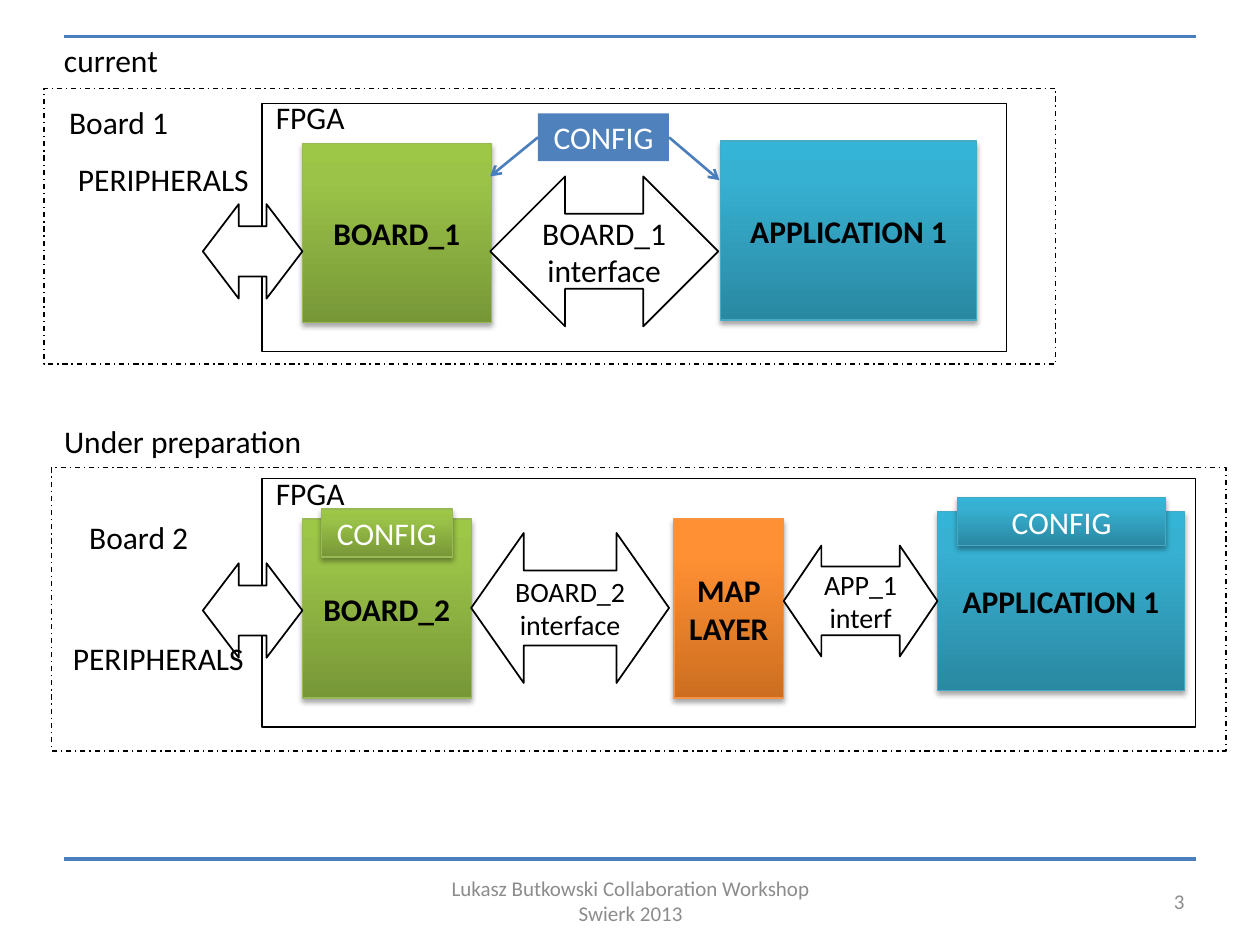
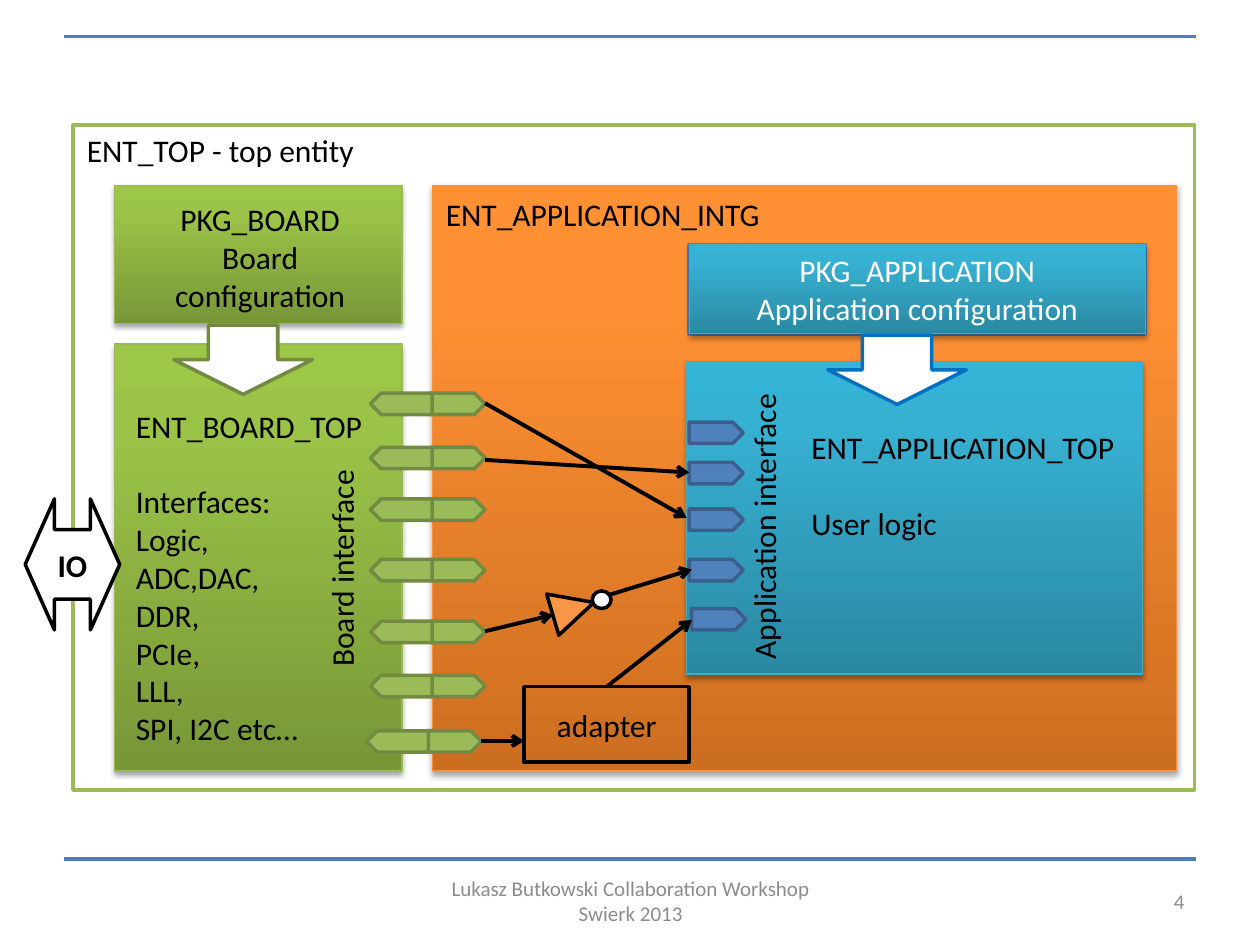
import copy
import dataclasses

import lxml.etree
import pptx
import pptx.dml.color
import pptx.enum.dml
import pptx.enum.shapes
import pptx.enum.text
import pptx.oxml.ns
import pptx.util

PX = 9144
SHAPE = pptx.enum.shapes.MSO_SHAPE
ALIGN = pptx.enum.text.PP_ALIGN
ANCHOR = pptx.enum.text.MSO_ANCHOR
FIT = pptx.enum.text.MSO_AUTO_SIZE
qn = pptx.oxml.ns.qn


@dataclasses.dataclass(frozen=True)
class Gradient:
    bottom: str
    middle: str
    top: str
    edge: str


@dataclasses.dataclass(frozen=True)
class Theme:
    font: str = "Calibri"
    body: int = 18
    small: int = 16
    footer: int = 12
    black: str = "000000"
    white: str = "FFFFFF"
    grey: str = "8C8C8C"
    rule: str = "4B7EBC"
    blue: str = "4F81BD"
    blue_edge: str = "3A5F8C"
    bright_blue: str = "0070C0"
    green: str = "9BBB59"
    green_edge: str = "738A42"
    orange: str = "F79646"
    board: Gradient = Gradient("779737", "9BC348", "9DC746", "98B955")
    app: Gradient = Gradient("2A88A2", "37B1D2", "34B4D6", "46AAC5")
    glue: Gradient = Gradient("CC6E20", "FF9034", "FF9136", "F69240")


def rgb(value):
    return pptx.dml.color.RGBColor.from_string(value)


def px(*values):
    return [pptx.util.Emu(v * PX) for v in values]


class Deck:
    def __init__(self, theme):
        self.theme = theme
        self.prs = pptx.Presentation()
        self.prs.slide_width, self.prs.slide_height = px(1000, 750)
        self.s = None

    def new_slide(self, number):
        self.s = self.prs.slides.add_slide(self.prs.slide_layouts[6])
        for y in (29, 682):
            self.line((51, y), (949, y), self.theme.rule, 2.25)
        style = dict(size=self.theme.footer, color=self.theme.grey,
                     anchor=ANCHOR.MIDDLE, fit=False)
        self.label((342, 695, 317, 40), "Lukasz Butkowski Collaboration Workshop Swierk 2013",
                   align=ALIGN.CENTER, **style)
        self.label((717, 695, 233, 40), str(number), align=ALIGN.RIGHT, **style)

    def set_text(self, sp, text, size=None, color=None, bold=False,
                 align=ALIGN.CENTER, anchor=ANCHOR.MIDDLE, gaps=()):
        tf = sp.text_frame
        tf.word_wrap = True
        tf.vertical_anchor = anchor
        size = size or self.theme.body
        for i, words in enumerate(text.split("\n")):
            p = tf.paragraphs[0] if i == 0 else tf.add_paragraph()
            p.text = words
            p.alignment = align
            p.font.name = self.theme.font
            p.font.size = pptx.util.Pt(size)
            p.font.bold = bold
            p.font.color.rgb = rgb(color or self.theme.black)
            if i in gaps:
                p.space_before = pptx.util.Pt(size * 1.2)

    def label(self, at, text, wrap=True, fit=True, turn=0,
              align=ALIGN.LEFT, anchor=ANCHOR.TOP, **style):
        sp = self.s.shapes.add_textbox(*px(*at))
        self.set_text(sp, text, align=align, anchor=anchor, **style)
        sp.text_frame.word_wrap = wrap
        if fit:
            sp.text_frame.auto_size = FIT.SHAPE_TO_FIT_TEXT
        sp.rotation = turn

    def shape(self, kind, at, fill=None, edge=None, width=2, adj=(), turn=0,
              dash=None, text=None, **style):
        sp = self.s.shapes.add_shape(kind, *px(*at))
        sp.shadow.inherit = False
        sp.rotation = turn
        for i, value in enumerate(adj):
            sp.adjustments[i] = value
        if fill:
            sp.fill.solid()
            sp.fill.fore_color.rgb = rgb(fill)
        else:
            sp.fill.background()
        if edge:
            sp.line.color.rgb = rgb(edge)
            sp.line.width = pptx.util.Pt(width)
            if dash:
                sp.line.dash_style = dash
        else:
            sp.line.fill.background()
        if text:
            self.set_text(sp, text, **style)
        return sp

    def frame(self, at, edge=None, width=0.75, **style):
        return self.shape(SHAPE.RECTANGLE, at, edge=edge or self.theme.black,
                          width=width, **style)

    def block(self, at, gradient, text=None, **style):
        sp = self.frame(at, gradient.edge, text=text, **style)
        sp.fill.gradient()
        sp.fill.gradient_angle = 90
        spPr = sp._element.spPr
        stops = spPr.find(".//" + qn("a:gsLst"))
        stops.insert(1, copy.deepcopy(stops[0]))
        colors = (gradient.bottom, gradient.middle, gradient.top)
        for stop, position, color in zip(sp.fill.gradient_stops, (0, 0.8, 1), colors):
            stop.position = position
            stop.color.rgb = rgb(color)
        shadow = lxml.etree.SubElement(
            spPr.find(qn("a:effectLst")), qn("a:outerShdw"), blurRad="39370",
            dist="22860", dir="5400000", rotWithShape="0")
        tint = lxml.etree.SubElement(shadow, qn("a:srgbClr"), val=self.theme.black)
        lxml.etree.SubElement(tint, qn("a:alpha"), val="35000")

    def two_way(self, at, text=None, width=1, **style):
        self.shape(SHAPE.LEFT_RIGHT_ARROW, at, self.theme.white, self.theme.black,
                   width, text=text, **style)

    def port(self, at, fill, edge, turn=0):
        self.shape(SHAPE.PENTAGON, at, fill, edge, turn=turn)

    def line(self, start, end, color, width, arrow=False, source=None, side=0):
        c = self.s.shapes.add_connector(
            pptx.enum.shapes.MSO_CONNECTOR.STRAIGHT, *px(*start, *end))
        if source is not None:
            c.begin_connect(source, side)
        c.line.color.rgb = rgb(color)
        c.line.width = pptx.util.Pt(width)
        spPr = c._element.spPr
        if arrow:
            lxml.etree.SubElement(spPr.find(qn("a:ln")), qn("a:tailEnd"), type="arrow")
        lxml.etree.SubElement(spPr, qn("a:effectLst"))


def build_boards(d):
    t = d.theme
    d.new_slide(3)
    dash = pptx.enum.dml.MSO_LINE.DASH_DOT
    for board in ((35, 70, 803, 219), (41, 371, 932, 225)):
        d.frame(board, dash=dash)
    for fpga in ((208, 82, 591, 197), (208, 380, 741, 197)):
        d.frame(fpga)
    for at, text in (
        ((41, 28, 96, 40), "current"),
        ((45, 77, 100, 40), "Board 1"),
        ((209, 73, 75, 40), "FPGA"),
        ((52, 122, 157, 40), "PERIPHERALS"),
        ((41, 330, 211, 40), "Under preparation"),
        ((61, 406, 100, 40), "Board 2"),
        ((209, 371, 75, 40), "FPGA"),
    ):
        d.label(at, text, wrap=False)
    for at, gradient, text in (
        ((240, 114, 150, 142), t.board, "BOARD_1"),
        ((572, 112, 203, 142), t.app, "APPLICATION 1"),
        ((240, 412, 134, 142), t.board, "BOARD_2"),
        ((535, 412, 87, 142), t.glue, "MAP\nLAYER"),
        ((744, 406, 196, 142), t.app, "APPLICATION 1"),
    ):
        d.block(at, gradient, text, bold=True)
    for y in (162, 447):
        d.two_way((161, y, 79, 75), adj=(0.53, 0.38))
    d.label((48, 502, 157, 40), "PERIPHERALS", wrap=False)
    d.two_way((389, 140, 181, 119), "BOARD_1 interface")
    d.two_way((374, 423, 157, 119), "BOARD_2 interface", adj=(0.5, 0.35), size=t.small)
    d.two_way((622, 433, 122, 88), "APP_1\ninterf", adj=(0.62, 0.34), size=t.small)

    config = d.shape(SHAPE.RECTANGLE, (427, 90, 104, 38), t.blue,
                     text="CONFIG", color=t.white)
    for start, end, side in (((427, 109), (389, 140), 1), ((531, 109), (571, 143), 3)):
        d.line(start, end, t.rule, 1.5, arrow=True, source=config, side=side)
    d.block((255, 404, 104, 38), t.board, "CONFIG", color=t.white)
    d.block((760, 395, 165, 38), t.app, "CONFIG", color=t.white)


def build_entities(d):
    t = d.theme
    d.new_slide(4)
    d.frame((58, 99, 890, 528), t.green, 2)
    d.block((91, 273, 228, 339), t.board)
    d.block((91, 147, 228, 110), t.board)
    d.block((343, 147, 591, 465), t.glue)
    d.frame((547, 194, 362, 71), t.blue, 2)
    d.block((545, 287, 362, 248), t.app)

    board_ports = [(294, y) for y in (312, 355, 396, 444, 493, 536)] + [(291, 580)]
    for x, y in board_ports:
        d.port((x + 48, y, 43, 17), t.green, t.green_edge)
        d.port((x, y, 49, 17), t.green, t.green_edge, turn=180)
    for x, y in ((547, 335), (547, 367), (547, 404), (547, 444), (549, 483)):
        d.port((x, y, 43, 17), t.blue, t.blue_edge)

    adapter = d.frame((416, 545, 131, 60), width=2, text="adapter")
    for start, end, source in (
        ((385, 320), (545, 411), None),
        ((385, 365), (547, 375), None),
        ((385, 501), (439, 488), None),
        ((382, 588), (416, 588), None),
        ((482, 545), (549, 492), adapter),
        ((484, 472), (549, 452), None),
    ):
        d.line(start, end, t.black, 2.25, arrow=True, source=source)
    d.shape(SHAPE.ISOSCELES_TRIANGLE, (438, 466, 34, 34), t.orange, t.black, turn=73.5)
    d.shape(SHAPE.OVAL, (470, 469, 15, 14), t.white, t.black)
    d.two_way((20, 396, 75, 104), "IO", width=2, adj=(0.53, 0.31), bold=True)

    d.label((59, 99, 299, 40), "ENT_TOP - top entity")
    d.label((98, 154, 217, 101), "PKG_BOARD\nBoard configuration", align=ALIGN.CENTER)
    d.block((547, 194, 362, 71), t.app, "PKG_APPLICATION\nApplication configuration",
            color=t.white)
    d.label((344, 150, 574, 40), "ENT_APPLICATION_INTG")
    for x, y, edge in ((138, 258, t.green_edge), (657, 266, t.bright_blue)):
        d.shape(SHAPE.DOWN_ARROW, (x, y, 110, 55), t.white, edge)
    d.label((634, 335, 271, 101), "ENT_APPLICATION_TOP\nUser logic", gaps=(1,))
    d.label((477, 384, 258, 40), "Application interface", turn=270)
    d.label((173, 421, 196, 40), "Board interface", turn=270)
    d.label((98, 318, 247, 283),
            "ENT_BOARD_TOP\nInterfaces:\nLogic,\nADC,DAC,\nDDR,\nPCIe,\nLLL,\nSPI, I2C etc…",
            gaps=(1,))


def main():
    d = Deck(Theme())
    build_boards(d)
    build_entities(d)
    d.prs.save("out.pptx")


if __name__ == "__main__":
    main()
